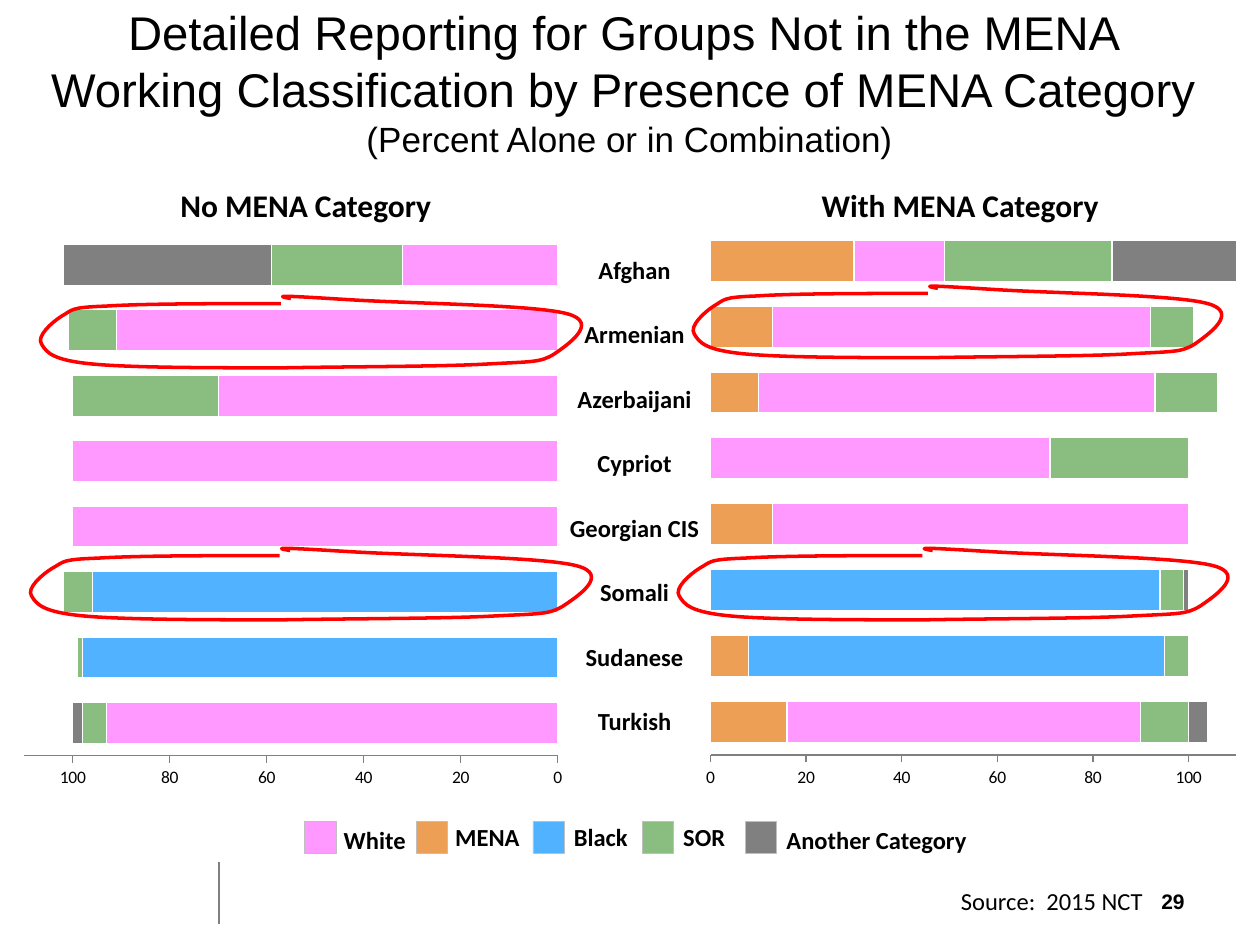
from dataclasses import dataclass
from lxml.etree import SubElement
from pptx import Presentation
from pptx.chart.data import CategoryChartData
from pptx.dml.color import RGBColor
from pptx.enum.chart import XL_CHART_TYPE as CT, XL_TICK_MARK as TICK
from pptx.enum.shapes import MSO_CONNECTOR as CONN, MSO_SHAPE as SHAPE
from pptx.enum.text import MSO_ANCHOR as ANCHOR, PP_ALIGN as ALIGN
from pptx.oxml.ns import qn
from pptx.util import Pt

COLORS = {
    "white": "FF99FF",
    "mena": "ED9F56",
    "black": "51B2FF",
    "sor": "89BE80",
    "other": "808080",
    "edge": "FFFFFF",
    "swatch_edge": "BFBFBF",
    "axis": "808080",
    "loop": "FF0000",
    "text": "000000",
}
GROUPS = ["Afghan", "Armenian", "Azerbaijani", "Cypriot",
          "Georgian CIS", "Somali", "Sudanese", "Turkish"]

LOOP_SIZE = (430, 56)
LOOP_START = (191, 6)
LOOP_CURVES = [
    ((144, 6), (81, 6), (52, 8)),
    ((23, 9), (26, 11), (17, 16)),
    ((9, 21), (-3, 32), (1, 38)),
    ((5, 45), (10, 51), (42, 54)),
    ((74, 57), (141, 57), (193, 57)),
    ((245, 56), (319, 56), (354, 54)),
    ((390, 52), (397, 53), (408, 46)),
    ((418, 39), (445, 21), (418, 14)),
    ((392, 7), (296, 6), (247, 3)),
    ((198, 0), (182, -1), (199, 2)),
]


@dataclass
class Box:
    x: float
    y: float
    w: float
    h: float

    def emu(self) -> tuple:
        return Pt(self.x), Pt(self.y), Pt(self.w), Pt(self.h)


@dataclass
class Panel:
    heading: str
    heading_box: Box
    box: Box
    plot: tuple
    series: list
    reverse: bool


@dataclass
class Key:
    label: str
    color: str
    x: float
    text: Box


PANELS = [
    Panel("With MENA Category", Box(462.4, 103, 186, 29), Box(367.2, 107, 352.8, 345.6),
          (0.11, 0.067, 0.852, 0.872),
          [("mena", (16, 8, 0, 13, 0, 10, 13, 30)),
           ("white", (74, 0, 0, 87, 71, 83, 79, 19)),
           ("black", (0, 87, 94, 0, 0, 0, 0, 0)),
           ("sor", (10, 5, 5, 0, 29, 13, 9, 35)),
           ("other", (4, 0, 1, 0, 0, 0, 0, 28))], False),
    Panel("No MENA Category", Box(96, 103, 162, 29), Box(1.2, 109.5, 352.8, 345.6),
          (0.036, 0.067, 0.864, 0.866),
          [("white", (93, 0, 0, 100, 100, 70, 91, 32)),
           ("black", (0, 98, 96, 0, 0, 0, 0, 0)),
           ("sor", (5, 1, 6, 0, 0, 30, 10, 27)),
           ("other", (2, 0, 0, 0, 0, 0, 0, 43))], True),
]
KEYS = [
    Key("White", "white", 174, Box(186, 468, 60, 24.5)),
    Key("MENA", "mena", 237.8, Box(249.7, 466.3, 60, 24.5)),
    Key("Black", "black", 304.5, Box(317.5, 466.3, 49, 24.5)),
    Key("SOR", "sor", 367, Box(380, 466.3, 49, 24.5)),
    Key("Another Category", "other", 425.8, Box(439, 468, 125.5, 24.5)),
]
LOOPS = [Box(23, 169.2, 309.6, 40.3), Box(396, 163.4, 302.4, 40.3),
         Box(17.3, 313.2, 321, 40.3), Box(387.4, 313.2, 314.6, 40.3)]


def rgb(name: str) -> RGBColor:
    return RGBColor.from_string(COLORS[name])


def add_run(p, text: str, size: float, font: str = "Calibri", bold: bool = False) -> None:
    r = p.add_run()
    r.text = text
    r.font.size, r.font.name, r.font.bold = Pt(size), font, bold
    r.font.color.rgb = rgb("text")


def add_text(slide, box: Box, lines: list, size: float, bold: bool = True,
             align=ALIGN.LEFT, font: str = "Calibri", after: float = 0):
    tf = slide.shapes.add_textbox(*box.emu()).text_frame
    tf.word_wrap = True
    for i, line in enumerate(lines):
        p = tf.add_paragraph() if i else tf.paragraphs[0]
        p.alignment, p.space_after = align, Pt(after)
        add_run(p, line, size, font, bold)
    return tf


def add_title(slide) -> None:
    sp = slide.shapes.title
    sp.left, sp.top, sp.width, sp.height = Box(-30.2, 24, 780, 45).emu()
    tf = sp.text_frame
    tf.word_wrap, tf.vertical_anchor = True, ANCHOR.MIDDLE
    p = tf.paragraphs[0]
    p.alignment = ALIGN.CENTER
    for line in ("Detailed Reporting for Groups Not in the MENA ",
                 "Working Classification by Presence of MENA Category "):
        add_run(p, line, 27, "Arial")
        p.add_line_break()
    add_run(p, "(Percent Alone or in Combination)", 20, "Arial")


def set_plot_area(chart, plot: tuple) -> None:
    area = chart._chartSpace.chart.plotArea
    for old in area.findall(qn("c:layout")):
        area.remove(old)
    layout = area.makeelement(qn("c:layout"), {})
    area.insert(0, layout)
    manual = SubElement(layout, qn("c:manualLayout"))
    settings = [("layoutTarget", "inner"), ("xMode", "edge"), ("yMode", "edge"),
                *zip("xywh", plot)]
    for tag, value in settings:
        SubElement(manual, qn("c:" + tag)).set("val", str(value))


def add_panel(slide, panel: Panel) -> None:
    data = CategoryChartData()
    data.categories = [str(i + 1) for i in range(len(GROUPS))]
    for i, (_, values) in enumerate(panel.series, 1):
        data.add_series(f"Series {i}", values)
    chart = slide.shapes.add_chart(CT.BAR_STACKED, *panel.box.emu(), data).chart
    chart.has_legend = chart.has_title = False
    chart.font.size, chart.font.name = Pt(10), "Calibri"
    chart.font.color.rgb = rgb("text")
    plot = chart.plots[0]
    plot.gap_width, plot.overlap, plot.vary_by_categories = 60, 100, False
    for series, (color, _) in zip(plot.series, panel.series):
        series.format.fill.solid()
        series.format.fill.fore_color.rgb = rgb(color)
        series.format.line.color.rgb = rgb("edge")
        series.format.line.width = Pt(0.75)
    chart.category_axis.visible = False
    axis = chart.value_axis
    axis.minimum_scale, axis.maximum_scale, axis.major_unit = 0, 110, 20
    axis.has_major_gridlines = False
    axis.major_tick_mark = TICK.OUTSIDE
    axis.reverse_order = panel.reverse
    axis.format.line.color.rgb = rgb("axis")
    axis.format.line.width = Pt(0.75)
    set_plot_area(chart, panel.plot)
    add_text(slide, panel.heading_box, [panel.heading], 18)


def add_key(slide, key: Key) -> None:
    sp = slide.shapes.add_shape(SHAPE.RECTANGLE, *Box(key.x, 469.5, 18, 18).emu())
    sp.shadow.inherit = False
    sp.fill.solid()
    sp.fill.fore_color.rgb = rgb(key.color)
    sp.line.color.rgb = rgb("swatch_edge")
    sp.line.width = Pt(0.25)
    tf = add_text(slide, key.text, [key.label], 14)
    tf.margin_left, tf.margin_right = Pt(10.4), Pt(0)


def add_segment(outline, tag: str, points: tuple) -> None:
    segment = SubElement(outline, qn(tag))
    for x, y in points:
        pt = SubElement(segment, qn("a:pt"))
        pt.set("x", str(x * 1000))
        pt.set("y", str(y * 1000))


def add_loop(slide, box: Box) -> None:
    builder = slide.shapes.build_freeform(*LOOP_START)
    builder.add_line_segments([curve[-1] for curve in LOOP_CURVES], close=False)
    sp = builder.convert_to_shape()
    sp.left, sp.top, sp.width, sp.height = box.emu()
    outline = next(sp._element.iter(qn("a:path")))
    for segment in list(outline):
        outline.remove(segment)
    for side, size in zip("wh", LOOP_SIZE):
        outline.set(side, str(size * 1000))
    add_segment(outline, "a:moveTo", (LOOP_START,))
    for curve in LOOP_CURVES:
        add_segment(outline, "a:cubicBezTo", curve)
    sp.shadow.inherit = False
    sp.fill.background()
    sp.line.color.rgb = rgb("loop")
    sp.line.width = Pt(2)


def add_rule(slide) -> None:
    line = slide.shapes.add_connector(CONN.STRAIGHT, Pt(125.3), Pt(492.5), Pt(125.3), Pt(527.8))
    line.line.color.rgb = rgb("axis")
    line.line.width = Pt(1.25)
    SubElement(line._element.spPr, qn("a:effectLst"))


def main() -> None:
    prs = Presentation()
    prs.slide_width, prs.slide_height = Pt(720), Pt(540)
    slide = prs.slides.add_slide(prs.slide_layouts[5])
    add_rule(slide)
    add_title(slide)
    number = add_text(slide, Box(516, 500.4, 168, 28.8), ["29"], 12, align=ALIGN.RIGHT, font="Arial")
    number.vertical_anchor = ANCHOR.MIDDLE
    for panel in PANELS:
        add_panel(slide, panel)
    add_text(slide, Box(318, 142.2, 89.3, 319), GROUPS, 14, align=ALIGN.CENTER, after=20)
    for key in KEYS:
        add_key(slide, key)
    for box in LOOPS:
        add_loop(slide, box)
    add_text(slide, Box(358.5, 502.5, 301.7, 24.5), ["Source:  2015 NCT"], 14, False, ALIGN.RIGHT)
    prs.save("out.pptx")


if __name__ == "__main__":
    main()
